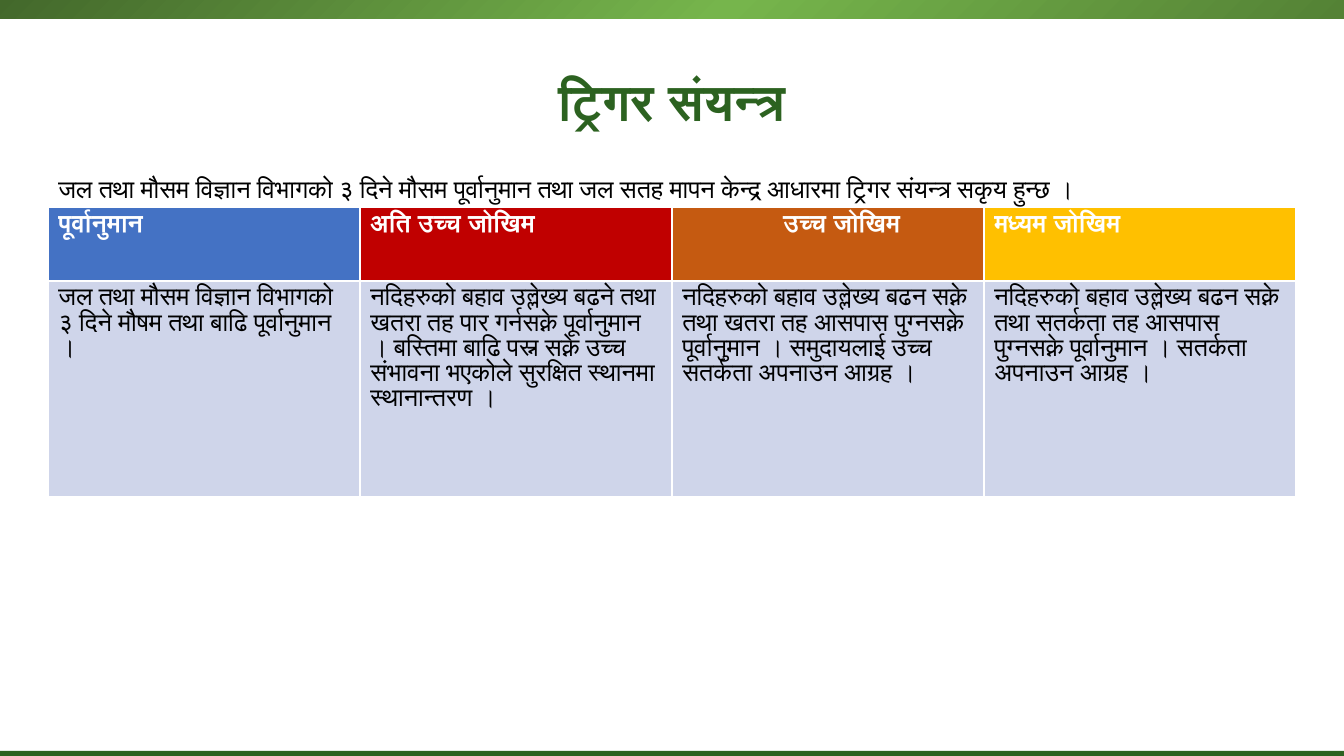
from dataclasses import dataclass
from typing import NamedTuple

from lxml import etree
from pptx import Presentation
from pptx import util as u
from pptx.dml.color import RGBColor
from pptx.enum import lang, shapes, text
from pptx.oxml import ns

FONT = "Calibri"
GREEN, WHITE, BLACK, PALE_BLUE = "2C6220", "FFFFFF", "000000", "CFD5EA"
BAR_GRADIENT = ((0, "548235"), (46, "76B54C"), (100, "43682B"))
PAGE_WIDTH, PAGE_HEIGHT = u.Inches(13.33), u.Inches(7.5)
COLUMN, ROW = PAGE_WIDTH / 100, PAGE_HEIGHT / 100


class Frame(NamedTuple):
    column: float
    row: float
    columns: float
    rows: float

    def lengths(self) -> tuple[int, int, int, int]:
        return (round(self.column * COLUMN), round(self.row * ROW),
                round(self.columns * COLUMN), round(self.rows * ROW))


@dataclass
class Forecast:
    heading: str
    color: str
    advice: str
    heading_indent: float = 0.1


TOP_BAR = Frame(-0.07, -0.4, 100.07, 2.8)
BOTTOM_BAR = Frame(-0.07, 99.33, 100.07, 0.67)
TITLE = Frame(5, 8.5, 90, 10.67)
INTRO = Frame(3.6, 22, 94.7, 4.8)
ROW_HEIGHTS = (9.67, 28.67)
TABLE = Frame(3.6, 27.45, 92.85, sum(ROW_HEIGHTS))

FORECASTS = [
    Forecast("पूर्वानुमान", "4472C4",
             "जल तथा मौसम विज्ञान विभागको ३ दिने मौषम तथा बाढि पूर्वानुमान ।"),
    Forecast("अति उच्च जोखिम", "C00000",
             "नदिहरुको बहाव उल्लेख्य बढने तथा खतरा तह पार गर्नसक्ने पूर्वानुमान । "
             "बस्तिमा बाढि पस्न सक्ने उच्च संभावना भएकोले सुरक्षित स्थानमा स्थानान्तरण ।"),
    Forecast("उच्च जोखिम", "C55A11",
             "नदिहरुको बहाव उल्लेख्य बढन सक्ने तथा खतरा तह आसपास पुग्नसक्ने पूर्वानुमान । "
             "समुदायलाई उच्च सतर्कता अपनाउन आग्रह ।", heading_indent=1.1),
    Forecast("मध्यम जोखिम", "FFC000",
             "नदिहरुको बहाव उल्लेख्य बढन सक्ने तथा सतर्कता तह आसपास पुग्नसक्ने पूर्वानुमान । "
             "सतर्कता अपनाउन आग्रह ।"),
]


def rgb(color: str) -> RGBColor:
    return RGBColor.from_string(color)


def add_color(parent, color: str) -> None:
    etree.SubElement(parent, ns.qn("a:srgbClr"), val=color)


def write(frame, words: str, *, size: float = 18, color: str = BLACK, bold: bool = False,
          align=text.PP_ALIGN.LEFT, spacing=1.0) -> None:
    frame.word_wrap = True
    para = frame.paragraphs[0]
    para.alignment = align
    para.line_spacing = spacing
    span = para.add_run()
    span.text = words
    span.font.name = FONT
    span.font.size = u.Pt(size)
    span.font.bold = bold
    span.font.language_id = lang.MSO_LANGUAGE_ID.NEPALI
    span.font.color.rgb = rgb(color)


def add_bar(page, frame: Frame, color: str):
    bar = page.shapes.add_shape(shapes.MSO_SHAPE.RECTANGLE, *frame.lengths())
    bar.shadow.inherit = False
    bar.fill.solid()
    bar.fill.fore_color.rgb = rgb(color)
    bar.line.fill.background()
    return bar


def add_circular_gradient(bar, stops) -> None:
    properties = bar.fill._xPr
    solid = properties.find(ns.qn("a:solidFill"))
    gradient = etree.Element(ns.qn("a:gradFill"), rotWithShape="1")
    stop_list = etree.SubElement(gradient, ns.qn("a:gsLst"))
    for position, color in stops:
        stop = etree.SubElement(stop_list, ns.qn("a:gs"), pos=str(position * 1000))
        add_color(stop, color)
    circle = etree.SubElement(gradient, ns.qn("a:path"), {"path": "circle"})
    etree.SubElement(circle, ns.qn("a:fillToRect"), l="100000", t="100000")
    properties.replace(solid, gradient)


def style_cell(cell, fill: str) -> None:
    cell.fill.solid()
    cell.fill.fore_color.rgb = rgb(fill)
    properties = cell._tc.get_or_add_tcPr()
    for index, side in enumerate("LRTB"):
        border = etree.Element(ns.qn(f"a:ln{side}"), w=str(u.Pt(1.5)))
        add_color(etree.SubElement(border, ns.qn("a:solidFill")), WHITE)
        properties.insert(index, border)


def add_forecast_table(page, forecasts: list[Forecast]) -> None:
    table = page.shapes.add_table(2, len(forecasts), *TABLE.lengths()).table
    table.horz_banding = False
    for row, height in zip(table.rows, ROW_HEIGHTS):
        row.height = round(height * ROW)
    for index, forecast in enumerate(forecasts):
        table.columns[index].width = round(TABLE.columns * COLUMN / len(forecasts))
        heading, advice = table.cell(0, index), table.cell(1, index)
        style_cell(heading, forecast.color)
        style_cell(advice, PALE_BLUE)
        heading.margin_left = u.Inches(forecast.heading_indent)
        write(heading.text_frame, forecast.heading, color=WHITE, bold=True, spacing=u.Pt(18))
        write(advice.text_frame, forecast.advice, spacing=u.Pt(18))


def main() -> None:
    deck = Presentation()
    deck.slide_width, deck.slide_height = PAGE_WIDTH, PAGE_HEIGHT
    page = deck.slides.add_slide(deck.slide_layouts[5])

    add_bar(page, BOTTOM_BAR, GREEN)
    add_circular_gradient(add_bar(page, TOP_BAR, GREEN), BAR_GRADIENT)

    title = page.shapes.title
    title.left, title.top, title.width, title.height = TITLE.lengths()
    title.text_frame.auto_size = text.MSO_AUTO_SIZE.NONE
    title.text_frame.vertical_anchor = text.MSO_ANCHOR.MIDDLE
    write(title.text_frame, "ट्रिगर संयन्त्र", size=36, color=GREEN, bold=True,
          align=text.PP_ALIGN.CENTER, spacing=0.9)

    intro = page.shapes.add_textbox(*INTRO.lengths())
    write(intro.text_frame,
          "जल तथा मौसम विज्ञान विभागको ३ दिने मौसम पूर्वानुमान तथा जल सतह मापन केन्द्र "
          "आधारमा ट्रिगर संयन्त्र सकृय हुन्छ ।", align=text.PP_ALIGN.JUSTIFY, spacing=1.07)

    add_forecast_table(page, FORECASTS)
    deck.save("out.pptx")


if __name__ == "__main__":
    main()
